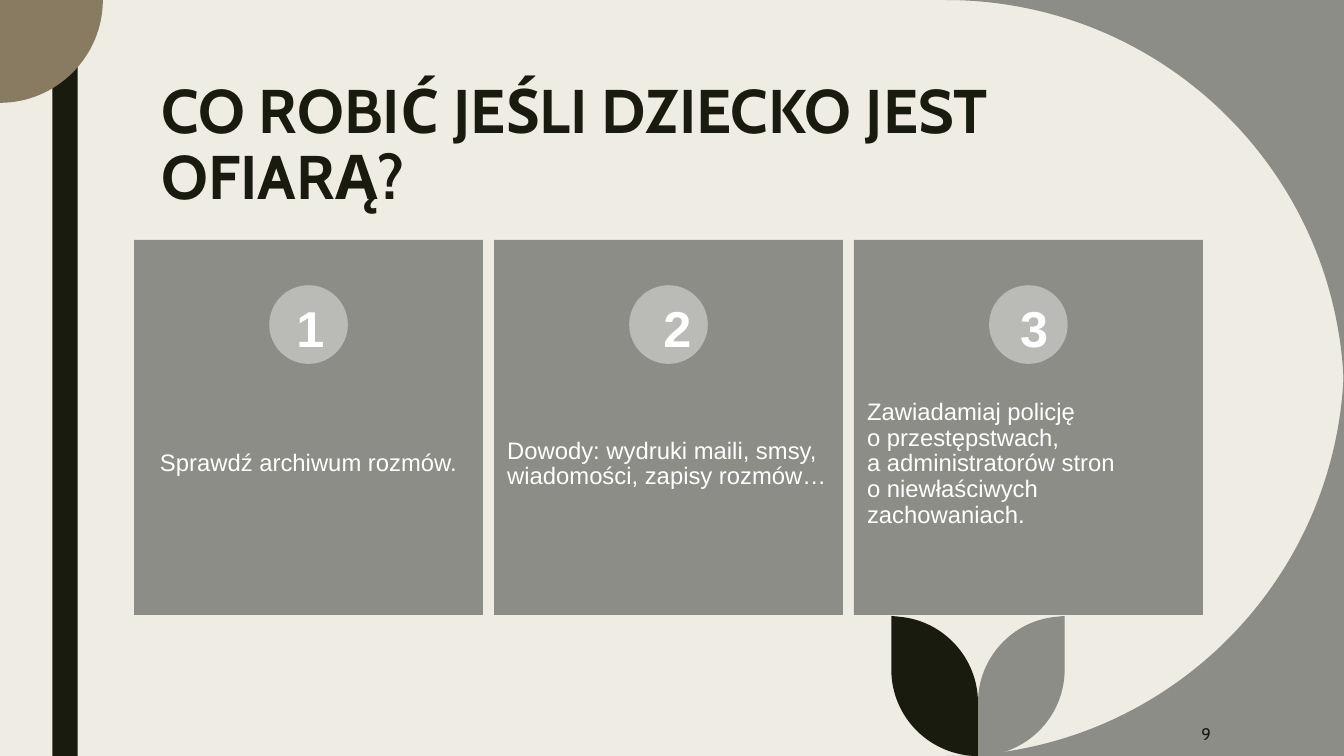
from lxml import etree
from pptx import Presentation
from pptx.dml.color import RGBColor
from pptx.enum.shapes import MSO_SHAPE
from pptx.enum.text import MSO_ANCHOR, MSO_AUTO_SIZE, PP_ALIGN
from pptx.oxml.ns import qn
from pptx.util import Inches, Pt

# Content
TITLE = "CO ROBIĆ JEŚLI DZIECKO JEST OFIARĄ?"
PAGE_NUMBER = "9"
LEFT, CENTER, RIGHT = PP_ALIGN.LEFT, PP_ALIGN.CENTER, PP_ALIGN.RIGHT
TOP, MIDDLE = MSO_ANCHOR.TOP, MSO_ANCHOR.MIDDLE
RECTANGLE, OVAL = MSO_SHAPE.RECTANGLE, MSO_SHAPE.OVAL
# Number, left edge of the number, alignment of the text, lines of text
STEPS = [
    ("1", 2.84, CENTER, ["Sprawdź archiwum rozmów."]),
    ("2", 6.48, LEFT, ["Dowody: wydruki maili, smsy, wiadomości, zapisy rozmów…"]),
    ("3", 10.02, LEFT, ["Zawiadamiaj policję ", "o przestępstwach, ",
                        "a administratorów stron ", "o niewłaściwych zachowaniach."]),
]

# Colours and fonts
CREAM = RGBColor(0xEF, 0xED, 0xE3)
DARK = RGBColor(0x19, 0x1B, 0x0E)
GRAY = RGBColor(0x8C, 0x8D, 0x86)
LIGHT_GRAY = RGBColor(0xBA, 0xBB, 0xB6)
BROWN = RGBColor(0x89, 0x7B, 0x61)
WHITE = RGBColor(0xFF, 0xFF, 0xFF)
HEADING_FONT, BODY_FONT = "Cabin", "Arial"

# Measures in inches
WIDTH, HEIGHT = 13.33, 7.5
CARD_LEFT, CARD_TOP, CARD_WIDTH, CARD_HEIGHT, CARD_PITCH = 1.33, 2.38, 3.46, 3.72, 3.57
CIRCLE_TOP, CIRCLE_SIZE = 2.83, 0.78
LEAF_AXIS = 9.7

# Outlines: one point is a corner, three points are a cubic curve
CORNER = [[(WIDTH, 0)], [(9.38, 0)], [(11.57, 0), (WIDTH, 1.77), (WIDTH, 3.95)]]
QUARTER_DISC = [[(0, 0)], [(1.02, 0)], [(1.02, 0.56), (0.56, 1.02), (0, 1.02)]]
LEAF = [[(10.56, 6.11)], [(10.56, 6.64)], [(10.56, 7.12), (10.17, 7.5), (9.7, 7.5)],
        [(9.7, 6.97)], [(9.7, 6.53), (10.04, 6.16), (10.47, 6.12)]]


def flip_down(outline):
    return [[(x, HEIGHT - y) for x, y in segment] for segment in outline]


def flip_across(outline):
    return [[(2 * LEAF_AXIS - x, y) for x, y in segment] for segment in outline]


def paint(shape, color):
    shape.shadow.inherit = False
    shape.fill.solid()
    shape.fill.fore_color.rgb = color
    shape.line.fill.background()


def add_outline(slide, outline, color):
    start, *rest = [(Inches(x), Inches(y)) for segment in outline for x, y in segment]
    builder = slide.shapes.build_freeform(*start)
    builder.add_line_segments(rest, close=True)
    shape = builder.convert_to_shape()
    paint(shape, color)

    # Turn each group of three line steps into one curve
    line_steps = iter(list(shape.element.iter(qn("a:lnTo"))))
    for segment in outline[1:]:
        steps = [next(line_steps) for _ in segment]
        if len(steps) == 3:
            curve = etree.Element(qn("a:cubicBezTo"))
            steps[0].addprevious(curve)
            for step in steps:
                curve.append(step[0])
                step.getparent().remove(step)


def add_block(slide, kind, box, color):
    paint(slide.shapes.add_shape(kind, *map(Inches, box)), color)


def write(shape, lines, size, font, color, align, anchor=TOP, bold=False, spacing=1.0):
    frame = shape.text_frame
    frame.word_wrap = True
    frame.auto_size = MSO_AUTO_SIZE.NONE
    frame.vertical_anchor = anchor
    paragraph = frame.paragraphs[0]
    paragraph.alignment = align
    paragraph.line_spacing = spacing
    for index, line in enumerate(lines):
        if index:
            paragraph.add_line_break()
        run = paragraph.add_run()
        run.text = line
        run.font.size = Pt(size)
        run.font.name = font
        run.font.bold = bold
        run.font.color.rgb = color


def add_text(slide, box):
    return slide.shapes.add_textbox(*map(Inches, box))


def add_decoration(slide):
    add_block(slide, RECTANGLE, (0.52, 0, 0.25, HEIGHT), DARK)
    add_outline(slide, CORNER, GRAY)
    add_outline(slide, flip_down(CORNER), GRAY)
    add_outline(slide, QUARTER_DISC, BROWN)
    add_outline(slide, LEAF, GRAY)
    add_outline(slide, flip_across(LEAF), DARK)


def add_step(slide, index, number, number_left, align, lines):
    left = CARD_LEFT + index * CARD_PITCH
    circle_left = left + (CARD_WIDTH - CIRCLE_SIZE) / 2
    add_block(slide, RECTANGLE, (left, CARD_TOP, CARD_WIDTH, CARD_HEIGHT), GRAY)
    add_block(slide, OVAL, (circle_left, CIRCLE_TOP, CIRCLE_SIZE, CIRCLE_SIZE), LIGHT_GRAY)

    description = add_text(slide, (left, 3.86, CARD_WIDTH, 1.49))
    frame = description.text_frame
    frame.margin_left = frame.margin_right = Inches(0.13)
    frame.margin_top = frame.margin_bottom = Inches(0.13)
    write(description, lines, 17, BODY_FONT, WHITE, align, MIDDLE, spacing=0.9)

    label = add_text(slide, (number_left, 2.9, 0.38, 0.71))
    write(label, [number], 36, BODY_FONT, WHITE, CENTER, bold=True)


def main():
    presentation = Presentation()
    presentation.slide_width, presentation.slide_height = Inches(WIDTH), Inches(HEIGHT)
    slide = presentation.slides.add_slide(presentation.slide_layouts[5])
    slide.background.fill.solid()
    slide.background.fill.fore_color.rgb = CREAM

    add_decoration(slide)

    # Title and page number
    title = slide.shapes.title
    title.left, title.top, title.width, title.height = map(Inches, (1.5, 0.75, 10.5, 1.62))
    write(title, [TITLE], 44, HEADING_FONT, DARK, LEFT, bold=True, spacing=0.89)
    page_number = add_text(slide, (10.36, 7.06, 1.75, 0.44))
    write(page_number, [PAGE_NUMBER], 12, HEADING_FONT, DARK, RIGHT, MIDDLE)

    # Numbered cards
    for index, step in enumerate(STEPS):
        add_step(slide, index, *step)

    presentation.save("out.pptx")


if __name__ == "__main__":
    main()
